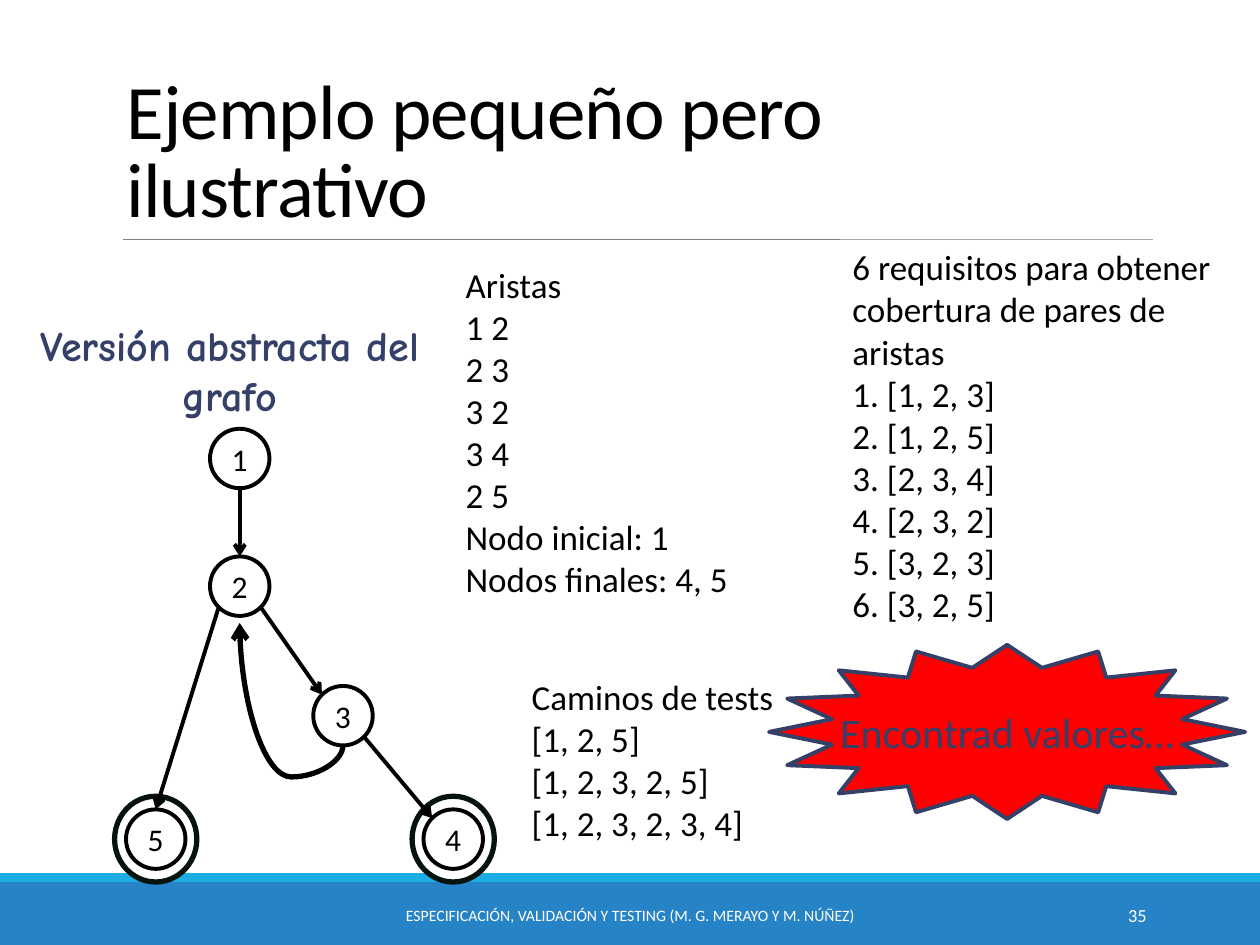
from math import sqrt

from lxml.etree import SubElement
from pptx import Presentation
from pptx.dml.color import RGBColor
from pptx.enum.shapes import MSO_CONNECTOR as Connector, MSO_SHAPE as Shape
from pptx.enum.text import MSO_ANCHOR as Anchor, MSO_AUTO_SIZE as AutoSize, PP_ALIGN as Align
from pptx.oxml.ns import qn
from pptx.util import Pt

COLORS = {
    "white": "FFFFFF", "black": "000000", "gray": "808080", "ring": "07130F",
    "navy": "344068", "red": "FF0000", "blue": "2683C6", "cyan": "1CADE4",
}
NODE_SIZE = 34
RING_SIZE = (47, 49)
NODES = {"4": (246, 300.5), "5": (76, 300.5), "3": (183, 230), "2": (124, 156), "1": (124, 83)}
FINAL_NODES = ("5", "4")
SITES = {
    "top": (0, -1), "bottom": (0, 1),
    "top left": (-sqrt(0.5), -sqrt(0.5)),
    "bottom left": (-sqrt(0.5), sqrt(0.5)),
    "bottom right": (sqrt(0.5), sqrt(0.5)),
}
EDGES = [
    ("1", "bottom", "2", "top"),
    ("2", "bottom left", "5", "top"),
    ("3", "bottom right", "4", "top left"),
    ("2", "bottom right", "3", "top left"),
]
EDGE_LIST = """Aristas
1 2
2 3
3 2
3 4
2 5
Nodo inicial: 1
Nodos finales: 4, 5"""
REQUIREMENTS = """6 requisitos para obtener cobertura de pares de aristas
1. [1, 2, 3]
2. [1, 2, 5]
3. [2, 3, 4]
4. [2, 3, 2]
5. [3, 2, 3]
6. [3, 2, 5]"""
TEST_PATHS = """Caminos de tests
[1, 2, 5]
[1, 2, 3, 2, 5]
[1, 2, 3, 2, 3, 4]"""


def color(name):
    return RGBColor.from_string(COLORS[name])


def write(shape, text, size=20, font="Calibri", fill="black", bold=False,
          align=Align.LEFT, anchor=Anchor.TOP, wrap=True, spacing=None):
    frame = shape.text_frame
    frame.text = text
    frame.auto_size = AutoSize.NONE
    frame.word_wrap = wrap
    frame.vertical_anchor = anchor
    for paragraph in frame.paragraphs:
        paragraph.alignment = align
        paragraph.line_spacing = spacing
        for run in paragraph.runs:
            run.font.size = Pt(size)
            run.font.name = font
            run.font.bold = bold
            run.font.color.rgb = color(fill)


def add_text(slide, box, text, **text_format):
    write(slide.shapes.add_textbox(*map(Pt, box)), text, **text_format)


def add_shape(slide, kind, box, fill="white", line=None, line_width=2.25):
    shape = slide.shapes.add_shape(kind, *map(Pt, box))
    shape.shadow.inherit = False
    shape.fill.solid()
    shape.fill.fore_color.rgb = color(fill)
    if line:
        shape.line.color.rgb = color(line)
        shape.line.width = Pt(line_width)
    else:
        shape.line.fill.background()
    return shape


def add_line(slide, start, end, kind=Connector.STRAIGHT, line="black", width=2.25, arrow=True):
    connector = slide.shapes.add_connector(kind, *map(Pt, (*start, *end)))
    connector.line.color.rgb = color(line)
    connector.line.width = Pt(width)
    if arrow:
        SubElement(connector.line._get_or_add_ln(), qn("a:tailEnd"), type="arrow")
    SubElement(connector._element.spPr, qn("a:effectLst"))
    return connector


def add_hook(slide, start, end, drop):
    """Curve that leaves start downwards, dips by drop and rises to end on its left."""
    connector = add_line(slide, start, end, kind=Connector.CURVE, width=3)
    across, rise = start[0] - end[0], start[1] - end[1]
    connector.left = Pt((start[0] + end[0] - rise) / 2)
    connector.top = Pt((start[1] + end[1] - across) / 2)
    connector.width, connector.height = Pt(rise), Pt(across)
    properties = connector._element.spPr
    transform = properties.find(qn("a:xfrm"))
    transform.attrib.pop("flipV", None)
    transform.set("rot", "5400000")
    transform.set("flipH", "1")
    geometry = properties.find(qn("a:prstGeom"))
    guides = geometry.find(qn("a:avLst"))
    if guides is None:
        guides = SubElement(geometry, qn("a:avLst"))
    SubElement(guides, qn("a:gd"), name="adj1", fmla=f"val {round(-drop / rise * 100000)}")


def draw_title(slide, box):
    title = slide.shapes.title
    title.left, title.top, title.width, title.height = map(Pt, box)
    write(title, "Ejemplo pequeño pero ilustrativo", size=44, anchor=Anchor.BOTTOM, spacing=0.85)
    title.text_frame.paragraphs[0].runs[0].font._element.set("spc", "-50")
    left, top, width, height = box
    rule_left, rule_top = left + 5.5, top + height
    add_line(slide, (rule_left, rule_top), (left + width, rule_top),
             line="gray", width=0.5, arrow=False)


def draw_footer(slide, box):
    left, top, width, height = box
    add_shape(slide, Shape.RECTANGLE, (left, top + 5, width, height - 5), fill="blue")
    add_shape(slide, Shape.RECTANGLE, (left, top, width, 5), fill="cyan")
    row = {"fill": "white", "anchor": Anchor.MIDDLE}
    add_text(slide, (left + 217.5, top + 9.5, 285, 28.75),
             "ESPECIFICACIÓN, VALIDACIÓN Y TESTING (M. G. MERAYO Y M. NÚÑEZ)",
             size=9, align=Align.CENTER, **row)
    add_text(slide, (left + 584.5, top + 9.5, 77.75, 28.75), "35",
             size=10.5, align=Align.RIGHT, **row)


def draw_graph(slide, box):
    left, top, width, _ = box
    centers = {name: (left + x, top + y) for name, (x, y) in NODES.items()}

    def circle_box(name, across, down):
        x, y = centers[name]
        return x - across / 2, y - down / 2, across, down

    def site(name, side):
        return tuple(middle + NODE_SIZE / 2 * step
                     for middle, step in zip(centers[name], SITES[side]))

    for name in FINAL_NODES:
        add_shape(slide, Shape.OVAL, circle_box(name, *RING_SIZE), line="ring", line_width=3)
    for name in NODES:
        node = add_shape(slide, Shape.OVAL, circle_box(name, NODE_SIZE, NODE_SIZE), line="black")
        write(node, name, size=18, align=Align.CENTER, anchor=Anchor.MIDDLE, wrap=False)
    for source, source_side, target, target_side in EDGES:
        add_line(slide, site(source, source_side), site(target, target_side))
    loop_x, loop_y = site("2", "bottom")
    add_hook(slide, site("3", "bottom"), (loop_x, loop_y + 4), drop=18)
    add_text(slide, (left, top, width - 32, 65.5), "Versión abstracta del grafo",
             size=24, font="Comic Neue", fill="navy", bold=True, align=Align.CENTER)


def draw_list(slide, box, text):
    write(add_shape(slide, Shape.RECTANGLE, box), text)


def draw_callout(slide, box):
    star = add_shape(slide, Shape.STAR_16_POINT, box, fill="red", line="navy")
    write(star, "Encontrad valores…", size=24, fill="navy",
          align=Align.CENTER, anchor=Anchor.MIDDLE, wrap=False)


def main():
    presentation = Presentation()
    presentation.slide_width, presentation.slide_height = Pt(720), Pt(540)
    slide = presentation.slides.add_slide(presentation.slide_layouts[5])
    draw_footer(slide, (0, 499, 720, 41))
    draw_title(slide, (65, 22.5, 594, 114.5))
    draw_graph(slide, (13, 179, 269, 326))
    draw_list(slide, (259, 147, 214.5, 201), EDGE_LIST)
    draw_list(slide, (480, 137, 226, 225.5), REQUIREMENTS)
    draw_list(slide, (296.75, 382.5, 186.5, 104.5), TEST_PATHS)
    draw_callout(slide, (439.5, 368.5, 272, 99.5))
    presentation.save("out.pptx")


if __name__ == "__main__":
    main()
